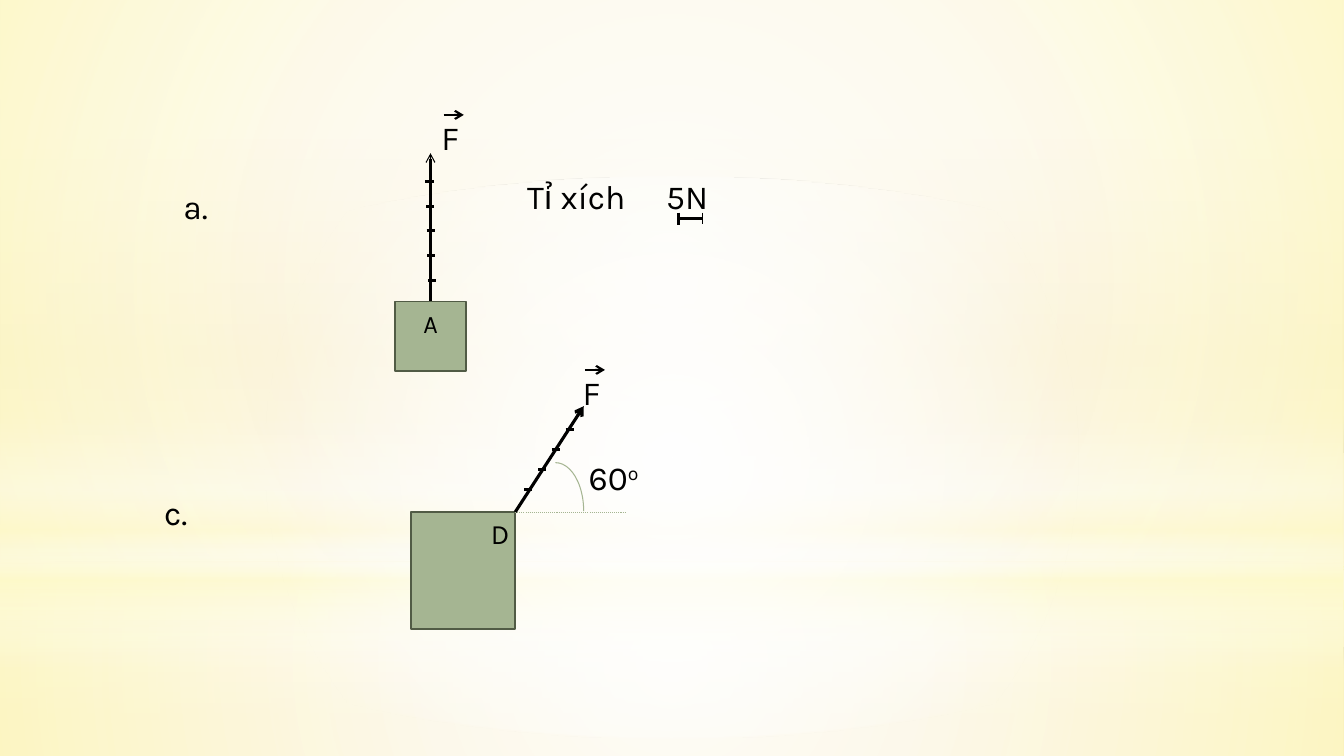
from pptx import Presentation
from pptx import util as u
from pptx.dml.color import RGBColor
from pptx.enum import dml, shapes, text
from pptx.oxml import parse_xml
from pptx.oxml.ns import nsdecls, qn

BLACK = RGBColor(0x00, 0x00, 0x00)
GREEN = RGBColor(0xA5, 0xB5, 0x92)
DARK_GREEN = RGBColor(0x51, 0x5B, 0x45)
WHITE = RGBColor(0xFF, 0xFF, 0xFF)
CREAM = RGBColor(0xFE, 0xFA, 0xC9)
SAND = RGBColor(0xFA, 0xF2, 0xD4)
GOLD = RGBColor(0xF5, 0xE4, 0xA9)

COLS, ROWS = 133.3, 75
RADIAL = ('<a:path path="circle"><a:fillToRect l="50000" t="50000" '
          'r="50000" b="50000"/></a:path>')
LINEAR = '<a:lin ang="5400000" scaled="0"/>'


def add_text(tf, content, font="Karla", size=24, color=BLACK, raised=False):
    r = tf.paragraphs[0].add_run()
    r.text = content
    r.font.name, r.font.size, r.font.color.rgb = font, u.Pt(size), color
    if raised:
        r.font._element.set("baseline", "30000")
    return r


class Board:
    def __init__(self, prs):
        self.s = prs.slides.add_slide(prs.slide_layouts[6])
        self.cell = u.Inches(0.1)

    def grid(self, *lengths):
        return [round(n * self.cell) for n in lengths]

    def gradient(self, fill, element, stops, direction):
        fill.solid()
        fill.fore_color.rgb = WHITE
        old = next(element.iter(qn("a:solidFill")))
        gs = "".join(
            f'<a:gs pos="{pos * 1000}"><a:srgbClr val="{color}">'
            f'<a:alpha val="{alpha * 1000}"/></a:srgbClr></a:gs>'
            for pos, color, alpha in stops)
        old.getparent().replace(old, parse_xml(
            f'<a:gradFill {nsdecls("a")} rotWithShape="1">'
            f'<a:gsLst>{gs}</a:gsLst>{direction}</a:gradFill>'))

    def background(self, stops):
        self.gradient(self.s.background.fill, self.s.element, stops, LINEAR)

    def shape(self, kind, box, fill=None, line=None, width=0.75):
        sp = self.s.shapes.add_shape(kind, *self.grid(*box))
        sp.shadow.inherit = False
        if fill is None:
            sp.fill.background()
        else:
            sp.fill.solid()
            sp.fill.fore_color.rgb = fill
        if line is None:
            sp.line.fill.background()
        else:
            sp.line.color.rgb, sp.line.width = line, u.Pt(width)
        return sp

    def glow(self, kind, box, stops, direction=RADIAL):
        sp = self.shape(kind, box)
        self.gradient(sp.fill, sp.element, stops, direction)

    def block(self, *box):
        self.shape(shapes.MSO_SHAPE.RECTANGLE, box, GREEN, DARK_GREEN, 1.25)

    def line(self, x1, y1, x2, y2, width=2.25, color=BLACK, arrow=False, dash=None):
        cx = self.s.shapes.add_connector(
            shapes.MSO_CONNECTOR.STRAIGHT, *self.grid(x1, y1, x2, y2))
        cx.line.color.rgb, cx.line.width = color, u.Pt(width)
        if dash:
            cx.line.dash_style = dash
        if arrow:
            cx.line._get_or_add_ln().append(
                parse_xml(f'<a:tailEnd {nsdecls("a")} type="arrow"/>'))
        cx._element.spPr.append(parse_xml(f'<a:effectLst {nsdecls("a")}/>'))

    def ticks(self, x, y, count, dx, dy):
        for i in range(count):
            left, top = x + i * dx, y + i * dy
            self.line(left, top, left + 0.8, top)

    def label(self, content, box, size=24, raised=None, tab=None):
        tf = self.s.shapes.add_textbox(*self.grid(*box)).text_frame
        tf.word_wrap = True
        tf.auto_size = text.MSO_AUTO_SIZE.SHAPE_TO_FIT_TEXT
        add_text(tf, content, size=size)
        if raised:
            add_text(tf, raised, size=size, raised=True)
        if tab:
            tf.paragraphs[0]._p.get_or_add_pPr().append(parse_xml(
                f'<a:tabLst {nsdecls("a")}><a:tab pos="{self.grid(tab)[0]}" '
                f'algn="l"/></a:tabLst>'))

    def force_name(self, x, y):
        self.label("F", (x, y, 2.7, 5))
        self.line(x + 1.2, y + 0.3, x + 3.2, y + 0.3, 1.5, arrow=True)


def draw_backdrop(b):
    rect, oval = shapes.MSO_SHAPE.RECTANGLE, shapes.MSO_SHAPE.OVAL
    b.background([(17, SAND, 100), (47, GOLD, 100), (80, SAND, 100), (95, GOLD, 100)])
    b.glow(rect, (0, 55.8, COLS, 19.2),
           [(0, WHITE, 91), (37, WHITE, 76), (100, CREAM, 79)])
    b.glow(rect, (0, 0, COLS, 55.8),
           [(0, WHITE, 89), (48, WHITE, 62), (100, CREAM, 79)])
    b.glow(rect, (0, 41.2, COLS, 25),
           [(0, WHITE, 0), (29, WHITE, 30), (45, CREAM, 40),
            (55, WHITE, 26), (65, CREAM, 60), (100, WHITE, 0)], LINEAR)
    b.glow(oval, (0, 17.5, COLS, 55.8), [(0, WHITE, 100), (56, WHITE, 0)])


def draw_vertical_force(b):
    b.label("a.", (17.2, 18, 7.5, 5))
    b.block(39.2, 29.9, 7, 6.9)
    b.line(42.7, 15.8, 42.7, 29.9)
    b.line(42.7, 22.8, 42.7, 15.2, 0.75, arrow=True)
    b.ticks(42.2, 18, 5, 0.06, 2.45)
    b.label("A", (41, 30.1, 4.9, 4), 18)
    b.force_name(42.8, 11.1)


def draw_scale(b):
    b.label("Tỉ xích\t5N", (51.3, 17, 21.7, 5), tab=13.8)
    b.line(67.3, 21.7, 69.7, 21.7)
    b.line(67.3, 21.1, 67.3, 22.3, 1.5)
    b.line(69.7, 21.1, 69.7, 22.2, 1)


def draw_slanted_force(b):
    b.label("c.", (15.3, 48.3, 7.5, 5))
    b.block(40.8, 50.8, 10.3, 11.6)
    b.line(51.1, 50.8, 57.9, 40.3, arrow=True)
    b.line(51.1, 50.8, 62.1, 50.8, 0.75, GREEN, dash=dml.MSO_LINE.ROUND_DOT)
    b.shape(shapes.MSO_SHAPE.ARC, (52.3, 45.9, 5.6, 9.6), line=GREEN)
    b.label("60", (57.4, 44.8, 7.5, 5), raised="o")
    b.force_name(56.8, 36.4)
    b.label("D", (47.7, 50.8, 3.9, 4.4), 20)
    b.ticks(52, 48.6, 4, 1.37, -2)


def main():
    prs = Presentation()
    prs.slide_width, prs.slide_height = u.Inches(COLS / 10), u.Inches(ROWS / 10)
    b = Board(prs)
    draw_backdrop(b)
    draw_vertical_force(b)
    draw_scale(b)
    draw_slanted_force(b)
    prs.save("out.pptx")


if __name__ == "__main__":
    main()
